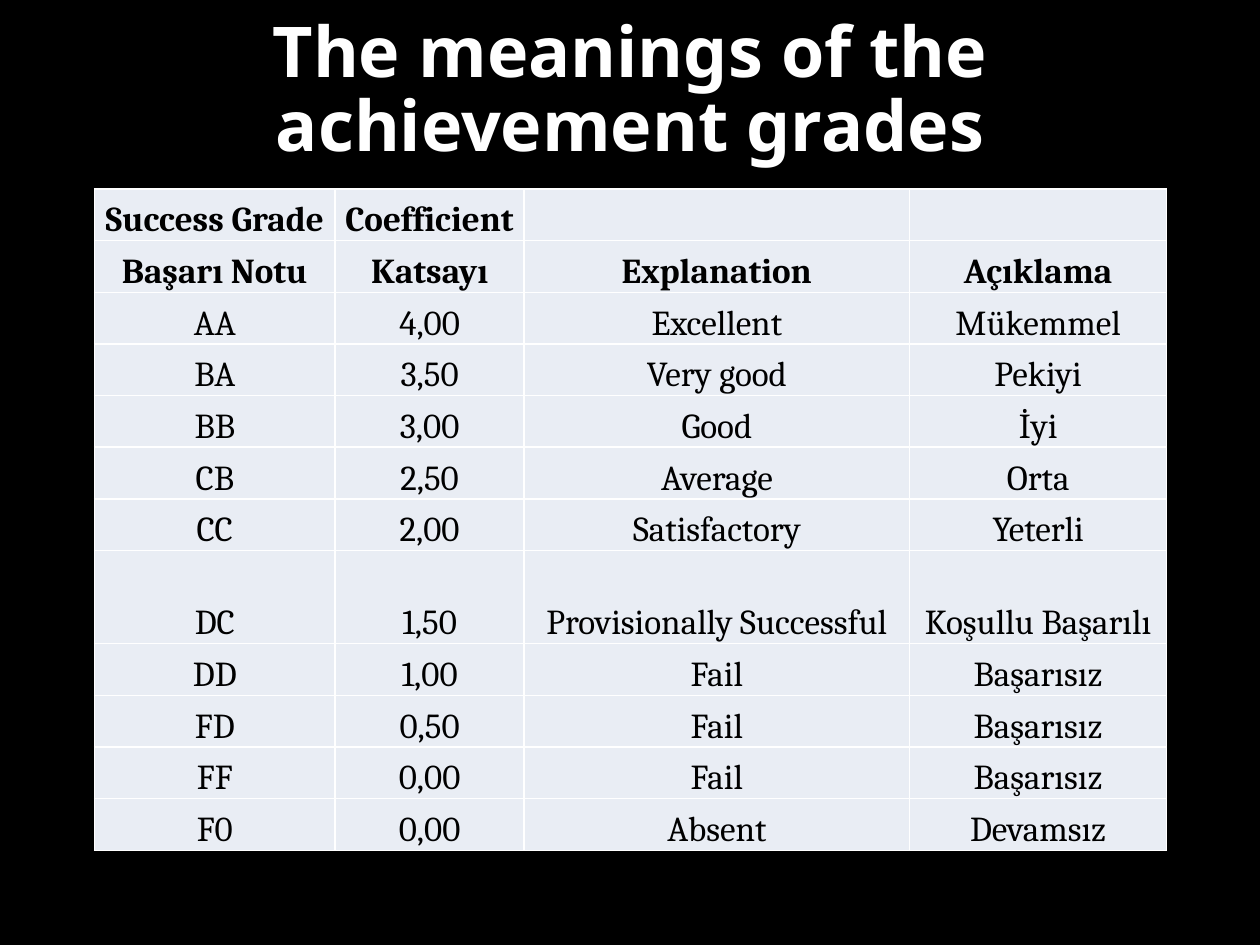
from dataclasses import dataclass

from lxml.etree import SubElement
from pptx import Presentation
from pptx.dml.color import RGBColor
from pptx.enum.text import MSO_ANCHOR as Anchor, PP_ALIGN as Align
from pptx.oxml.ns import qn
from pptx.util import Inches, Pt


@dataclass(frozen=True)
class Theme:
    background: str = "000000"
    title_color: str = "FFFFFF"
    title_font: str = "Noto Sans"
    title_size: int = 40
    cell_fill: str = "E9EDF4"
    cell_color: str = "000000"
    cell_font: str = "Cambria"
    cell_size: int = 20
    border_color: str = "FFFFFF"
    border_width: int = 1


THEME = Theme()

HEADER_ROWS = 2
COLUMN_WIDTHS = (1.91, 1.5, 3.06, 2.04)
ROW_HEIGHT, TALL_ROW_HEIGHT = 0.41, 0.74
TALL_GRADE = "DC"
GRADES = [
    ("Success Grade", "Coefficient", "", ""),
    ("Başarı Notu", "Katsayı", "Explanation", "Açıklama"),
    ("AA", "4,00", "Excellent", "Mükemmel"),
    ("BA", "3,50", "Very good", "Pekiyi"),
    ("BB", "3,00", "Good", "İyi"),
    ("CB", "2,50", "Average", "Orta"),
    ("CC", "2,00", "Satisfactory", "Yeterli"),
    ("DC", "1,50", "Provisionally Successful", "Koşullu Başarılı"),
    ("DD", "1,00", "Fail", "Başarısız"),
    ("FD", "0,50", "Fail", "Başarısız"),
    ("FF", "0,00", "Fail", "Başarısız"),
    ("F0", "0,00", "Absent", "Devamsız"),
]


def write_text(frame, text, *, font, size, color, bold=False, spacing=None):
    """Write one centred paragraph."""
    para = frame.paragraphs[0]
    para.alignment = Align.CENTER
    para.line_spacing = spacing
    span = para.add_run()
    span.text = text
    span.font.name = font
    span.font.size = Pt(size)
    span.font.bold = bold
    span.font.color.rgb = RGBColor.from_string(color)


def add_borders(cell):
    """Draw a thin line on all four sides of a cell."""
    properties = cell._tc.get_or_add_tcPr()
    for position, side in enumerate(("a:lnL", "a:lnR", "a:lnT", "a:lnB")):
        line = SubElement(properties, qn(side), w=str(Pt(THEME.border_width)))
        fill = SubElement(line, qn("a:solidFill"))
        SubElement(fill, qn("a:srgbClr"), val=THEME.border_color)
        properties.insert(position, line)  # borders come before the fill


def add_title(page, left, top, width, height):
    box = page.shapes.add_textbox(left, top, width, height)
    frame = box.text_frame
    frame.word_wrap = True
    frame.vertical_anchor = Anchor.MIDDLE
    write_text(frame, "The meanings of the achievement grades",
               font=THEME.title_font, size=THEME.title_size,
               color=THEME.title_color, bold=True, spacing=0.88)


def style_cell(cell):
    cell.fill.solid()
    cell.fill.fore_color.rgb = RGBColor.from_string(THEME.cell_fill)
    cell.vertical_anchor = Anchor.BOTTOM
    cell.margin_left = cell.margin_right = cell.margin_top = Inches(0.01)
    cell.margin_bottom = 0
    add_borders(cell)


def add_grade_table(page, left, top, width, height):
    table = page.shapes.add_table(len(GRADES), len(COLUMN_WIDTHS),
                                  left, top, width, height).table
    table.first_row = table.horz_banding = False
    for column, column_width in zip(table.columns, COLUMN_WIDTHS):
        column.width = Inches(column_width)
    for index, (row, texts) in enumerate(zip(table.rows, GRADES)):
        is_tall = texts[0] == TALL_GRADE
        row.height = Inches(TALL_ROW_HEIGHT if is_tall else ROW_HEIGHT)
        for cell, text in zip(row.cells, texts):
            style_cell(cell)
            if text:
                write_text(cell.text_frame, text, font=THEME.cell_font,
                           size=THEME.cell_size, color=THEME.cell_color,
                           bold=index < HEADER_ROWS)


def main():
    deck = Presentation()
    deck.slide_width, deck.slide_height = Inches(10), Inches(7.5)
    page = deck.slides.add_slide(deck.slide_layouts[6])
    page.background.fill.solid()
    page.background.fill.fore_color.rgb = RGBColor.from_string(THEME.background)

    # Heading above, grades below
    add_title(page, Inches(0.5), Inches(0.3), Inches(9), Inches(0.87))
    add_grade_table(page, Inches(0.75), Inches(1.5), Inches(8.51), Inches(5.25))
    deck.save("out.pptx")


if __name__ == "__main__":
    main()
